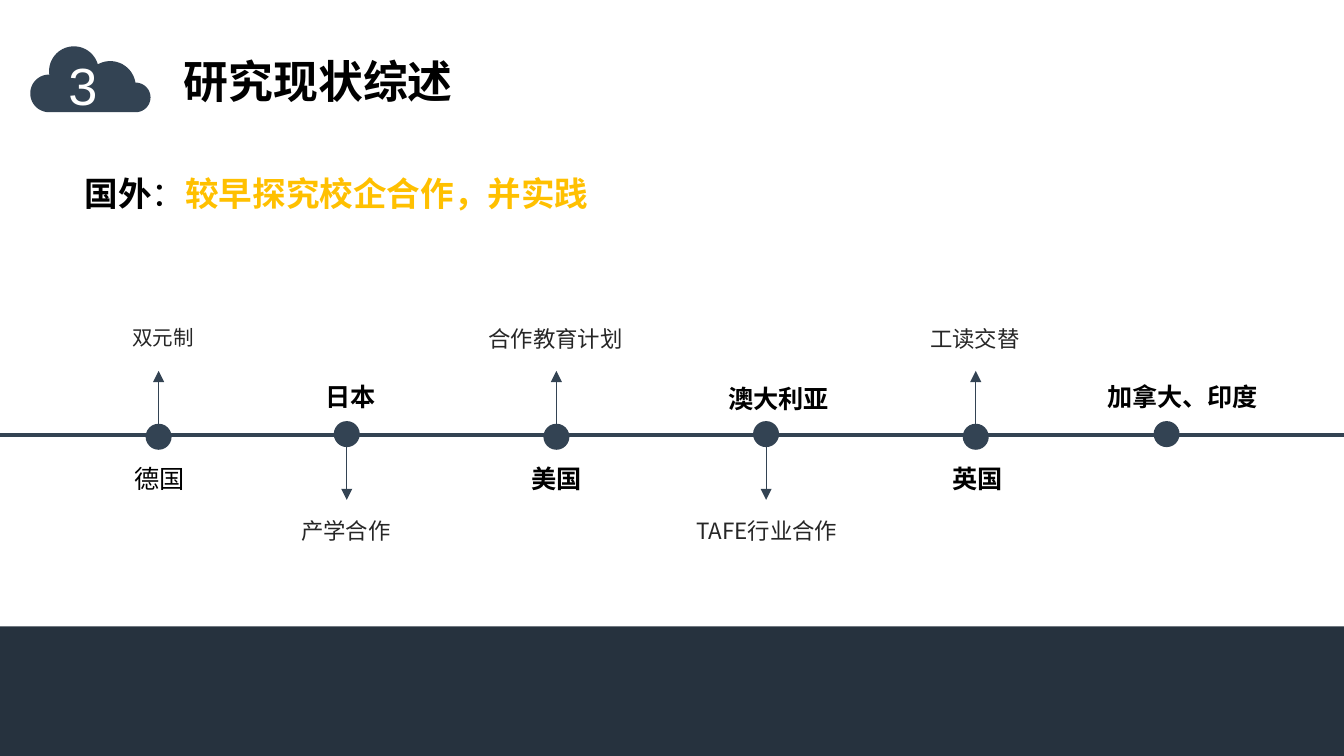
import math
from dataclasses import dataclass

from lxml import etree
from pptx import Presentation
from pptx import util as u
from pptx.dml.color import RGBColor
from pptx.enum import shapes, text
from pptx.oxml import ns

PX = 9144  # 100 px to the inch
WIDTH = 1000


@dataclass(frozen=True)
class Theme:
    slate: str = "334353"
    footer: str = "26323E"
    accent: str = "FFC000"
    black: str = "000000"
    note: str = "262626"
    white: str = "FFFFFF"
    cjk: str = "Noto Sans CJK SC"
    latin: str = "Arial"
    number_size: float = 28
    title_size: float = 24
    lead_size: float = 18
    country_size: float = 13.5
    note_size: float = 12
    small_note_size: float = 11


@dataclass(frozen=True)
class Event:
    x: int
    country: str
    country_x: int
    country_width: int = 68
    country_top: int = 279
    bold: bool = True
    note: str = ""
    note_x: int = 0
    note_size: float = Theme.note_size
    up: bool = False


class Painter:
    def __init__(self, slide, theme):
        self.slide = slide
        self.theme = theme

    def paint(self, shape, fill, line=None):
        shape.shadow.inherit = False
        shape.fill.solid()
        shape.fill.fore_color.rgb = RGBColor.from_string(fill)
        if line:
            shape.line.color.rgb = RGBColor.from_string(line)
            shape.line.width = u.Pt(1)
        else:
            shape.line.fill.background()

    def shape(self, kind, left, top, width, height, fill, line=None):
        shape = self.slide.shapes.add_shape(
            kind, left * PX, top * PX, width * PX, height * PX)
        self.paint(shape, fill, line)

    def outline(self, points, fill):
        points = [(round(x * PX), round(y * PX)) for x, y in points]
        builder = self.slide.shapes.build_freeform(*points[0], scale=1.0)
        builder.add_line_segments(points[1:], close=True)
        self.paint(builder.convert_to_shape(), fill)

    def line(self, x1, y1, x2, y2, weight, arrow=False):
        line = self.slide.shapes.add_connector(
            shapes.MSO_CONNECTOR.STRAIGHT, x1 * PX, y1 * PX, x2 * PX, y2 * PX)
        line.line.color.rgb = RGBColor.from_string(self.theme.slate)
        line.line.width = u.Pt(weight)
        if arrow:
            outline = line._element.spPr.find(ns.qn("a:ln"))
            etree.SubElement(outline, ns.qn("a:tailEnd"), type="triangle")
        etree.SubElement(line._element.spPr, ns.qn("a:effectLst"))

    def text(self, left, top, width, height, runs, size, font, center=False, wrap=True):
        """Each run is (words, colour, bold)."""
        box = self.slide.shapes.add_textbox(
            left * PX, top * PX, width * PX, height * PX)
        box.text_frame.word_wrap = wrap
        para = box.text_frame.paragraphs[0]
        para.alignment = text.PP_ALIGN.CENTER if center else text.PP_ALIGN.LEFT
        for words, color, bold in runs:
            span = para.add_run()
            span.text = words
            span.font.size = u.Pt(size)
            span.font.bold = bold
            span.font.name = font
            span.font.color.rgb = RGBColor.from_string(color)
            etree.SubElement(span.font._element, ns.qn("a:ea"),
                             typeface=self.theme.cjk)

    def event(self, event):
        theme = self.theme
        dot_top = 316 if event.up else 314
        self.shape(shapes.MSO_SHAPE.OVAL, event.x - 9, dot_top, 18, 18,
                   theme.slate, theme.slate)
        if event.note:
            start, end, note_top = (316, 276, 237) if event.up else (332, 372, 380)
            self.line(event.x, start, event.x, end, 0.5, arrow=True)
            self.text(event.note_x - 116, note_top, 233, 30,
                      [(event.note, theme.note, False)],
                      event.note_size, theme.cjk, center=True)
        self.text(event.country_x - event.country_width // 2, event.country_top,
                  event.country_width, 33,
                  [(event.country, theme.black, event.bold)],
                  theme.country_size, theme.latin, center=True)


def arc(x, y, radius, start, end, steps=32):
    angles = [math.radians(start + (end - start) * i / steps)
              for i in range(steps + 1)]
    return [(x + radius * math.cos(a), y + radius * math.sin(a)) for a in angles]


CLOUD = (
    arc(36.5, 69.5, 14, 90, 270)
    + arc(55, 53, 18.5, 172, 346)
    + arc(82, 64.5, 19, 239, 351)
    + arc(101, 72.5, 11, 270, 450)
)

EVENTS = [
    Event(118, "德国", 119, country_top=340, bold=False, note="双元制",
          note_x=121, note_size=Theme.small_note_size, up=True),
    Event(258, "日本", 261, note="产学合作", note_x=257),
    Event(414, "美国", 414, country_top=340, note="合作教育计划",
          note_x=413, up=True),
    Event(570, "澳大利亚", 579, 99, 280, note="TAFE行业合作", note_x=570),
    Event(726, "英国", 727, country_top=340, note="工读交替",
          note_x=725, up=True),
    Event(868, "加拿大、印度", 880, 142),
]


def main():
    deck = Presentation()
    deck.slide_width = WIDTH * PX
    deck.slide_height = deck.slide_width * 9 // 16
    page = deck.slides.add_slide(deck.slide_layouts[6])
    theme = Theme()
    painter = Painter(page, theme)

    # Timeline
    painter.line(0, 324, WIDTH, 324, 2.25)
    for event in EVENTS:
        painter.event(event)

    # Numbered cloud and title
    painter.outline(CLOUD, theme.slate)
    painter.text(41, 35, 52, 57, [("3", theme.white, False)],
                 theme.number_size, theme.latin)
    painter.text(127, 35, 376, 50, [("研究现状综述", theme.black, True)],
                 theme.title_size, theme.cjk)

    # Lead sentence
    painter.text(53, 124, 395, 40,
                 [("国外", theme.black, True), ("：", theme.black, False),
                  ("较早探究校企合作，并实践", theme.accent, True)],
                 theme.lead_size, theme.cjk, wrap=False)

    # Footer band, bleeding past the bottom edge
    painter.shape(shapes.MSO_SHAPE.RECTANGLE, 0, 466, WIDTH, 128, theme.footer)

    deck.save("out.pptx")


if __name__ == "__main__":
    main()
